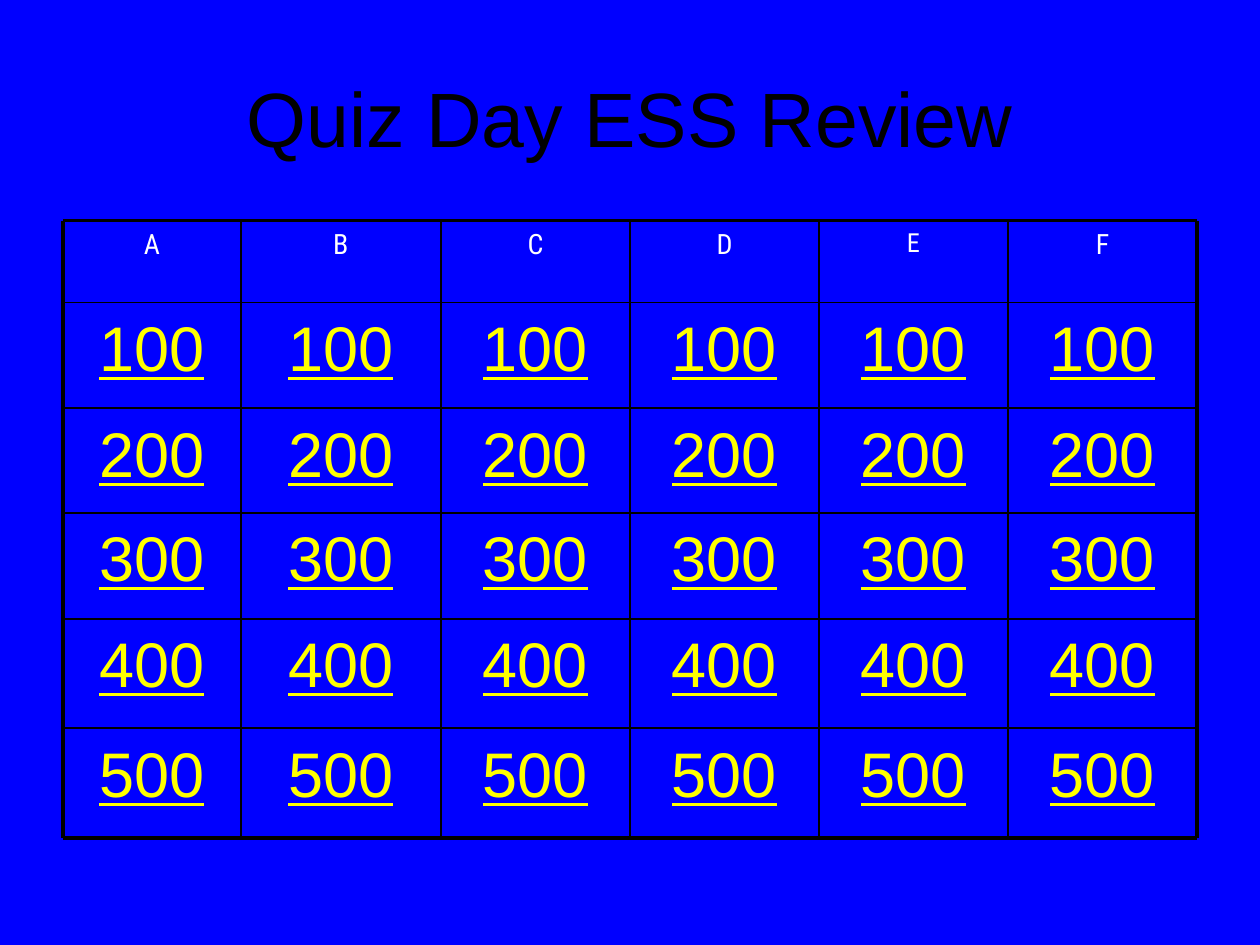
from dataclasses import dataclass
from itertools import accumulate, product

from lxml.etree import SubElement
from pptx import Presentation
from pptx.dml.color import RGBColor
from pptx.enum.shapes import MSO_CONNECTOR
from pptx.enum.text import MSO_ANCHOR, PP_ALIGN
from pptx.oxml.ns import qn
from pptx.util import Emu, Pt

PX = 9144  # EMU per px: the slide is 1000 by 750 px
BLUE, BLACK, WHITE, YELLOW = "0000FF", "000000", "FFFFFF", "FFFF00"
THIN, THICK = 1, 2.25

# Grid line positions, from the column widths and row heights
COLUMN_EDGES = list(accumulate([141, 159, 150, 150, 150, 150], initial=50))
ROW_EDGES = list(accumulate([65, 84, 83, 84, 87, 87], initial=175))


@dataclass
class Category:
    name: str
    size: float = 16
    space_before: float = 0


CATEGORIES = [Category("A"), Category("B"), Category("C"), Category("D"),
              Category("E", size=15, space_before=3), Category("F")]


def px(length: int) -> Emu:
    return Emu(length * PX)


def color(code: str) -> RGBColor:
    return RGBColor.from_string(code)


def write(frame, text: str, *, size: float, fill: str, font: str = "Arial",
          underline: bool = False, space_before: float = 0) -> None:
    """Put one centred paragraph into a text frame."""
    frame.word_wrap = True
    para = frame.paragraphs[0]
    para.alignment = PP_ALIGN.CENTER
    para.space_before = Pt(space_before)
    span = para.add_run()
    span.text = text
    span.font.name = font
    span.font.size = Pt(size)
    span.font.underline = underline
    span.font.color.rgb = color(fill)


def add_cell(page, row: int, column: int):
    """Add the text box that fills one field of the board."""
    left, right = COLUMN_EDGES[column:column + 2]
    top, bottom = ROW_EDGES[row:row + 2]
    return page.shapes.add_textbox(px(left), px(top), px(right - left),
                                   px(bottom - top))


def add_line(page, start: tuple[int, int], end: tuple[int, int],
             width: float) -> None:
    line = page.shapes.add_connector(MSO_CONNECTOR.STRAIGHT,
                                     *map(px, start + end))
    line.line.color.rgb = color(BLACK)
    line.line.width = Pt(width)
    SubElement(line._element.spPr, qn("a:effectLst"))


def add_title(page, text: str) -> None:
    title = page.shapes.title
    title.left, title.top, title.width, title.height = map(px, (50, 30, 900, 125))
    title.text_frame.vertical_anchor = MSO_ANCHOR.MIDDLE
    write(title.text_frame, text, size=44, fill=BLACK)


def add_fields(page) -> None:
    """Categories in the first row, the points to win below."""
    for column, category in enumerate(CATEGORIES):
        box = add_cell(page, 0, column)
        write(box.text_frame, category.name, size=category.size, fill=WHITE,
              font="Roboto Condensed", space_before=category.space_before)

    for row, column in product(range(1, len(ROW_EDGES) - 1),
                               range(len(CATEGORIES))):
        box = add_cell(page, row, column)
        write(box.text_frame, str(row * 100), size=36, fill=YELLOW,
              underline=True)
        if (row, column) == (1, 0):
            box.fill.solid()
            box.fill.fore_color.rgb = color(BLUE)


def add_grid(page) -> None:
    """Thick lines round the board, thin lines inside it."""
    left, right = COLUMN_EDGES[0], COLUMN_EDGES[-1]
    top, bottom = ROW_EDGES[0], ROW_EDGES[-1]
    for y in ROW_EDGES:
        add_line(page, (left, y), (right, y), THICK if y in (top, bottom) else THIN)
    for x in COLUMN_EDGES:
        add_line(page, (x, top), (x, bottom), THICK if x in (left, right) else THIN)


def main() -> None:
    deck = Presentation()
    deck.slide_width, deck.slide_height = px(1000), px(750)
    page = deck.slides.add_slide(deck.slide_layouts[5])

    # Background
    page.background.fill.solid()
    page.background.fill.fore_color.rgb = color(BLUE)

    # Title and question board
    add_title(page, "Quiz Day ESS Review")
    add_fields(page)
    add_grid(page)
    deck.save("out.pptx")


if __name__ == "__main__":
    main()
